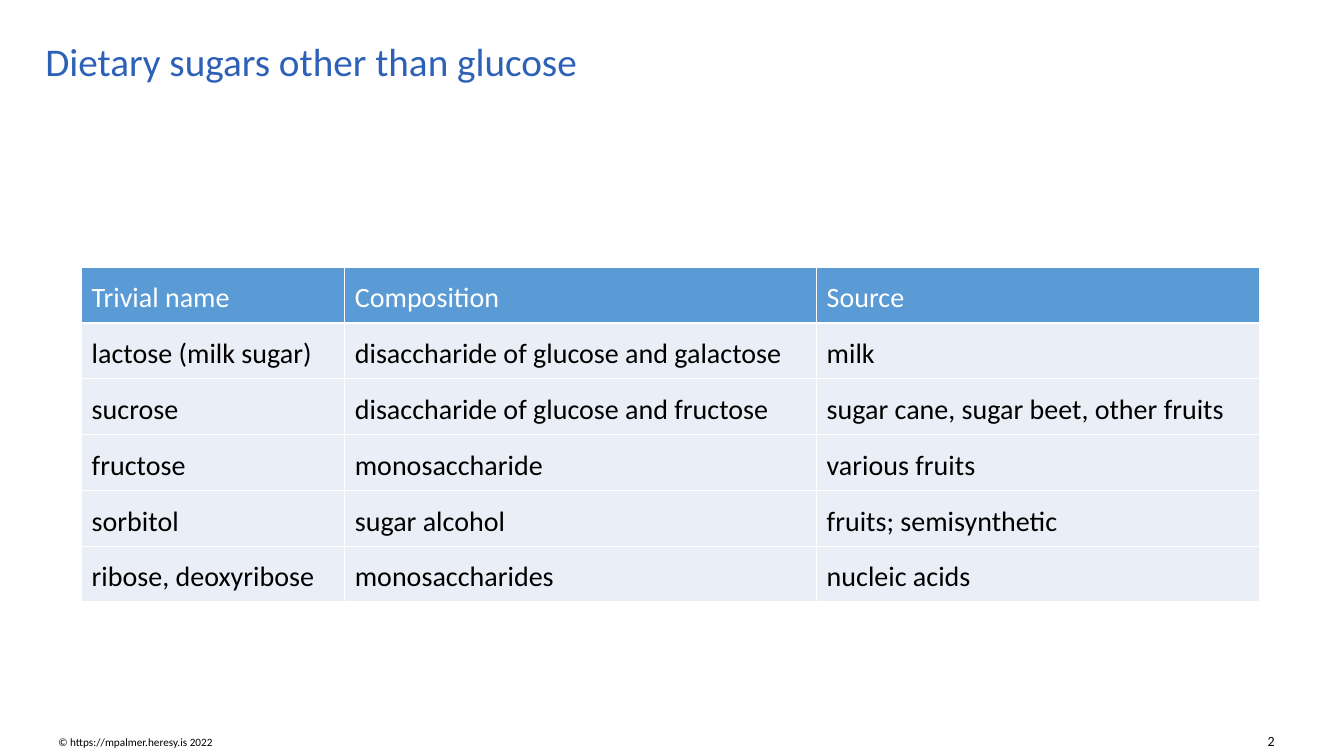
from lxml.etree import SubElement
from pptx import Presentation
from pptx.dml.color import RGBColor
from pptx.enum.text import MSO_ANCHOR, PP_ALIGN
from pptx.oxml.ns import qn
from pptx.util import Inches, Pt

FONT = "Calibri"
WIDE, HIGH = 13.33, 7.5
SUGARS = [
    ("Trivial name", "Composition", "Source"),
    ("lactose (milk sugar)", "disaccharide of glucose and galactose", "milk"),
    ("sucrose", "disaccharide of glucose and fructose", "sugar cane, sugar beet, other fruits"),
    ("fructose", "monosaccharide", "various fruits"),
    ("sorbitol", "sugar alcohol", "fruits; semisynthetic"),
    ("ribose, deoxyribose", "monosaccharides", "nucleic acids"),
]
SHARES = (2.61, 4.68, 4.39)


def color(code):
    """Turn a hex string into a colour."""
    return RGBColor.from_string(code)


def write(frame, text, size, code, align=PP_ALIGN.LEFT):
    """Set one paragraph of text and format its run."""
    frame.text = text
    para = frame.paragraphs[0]
    para.alignment = align
    font = para.runs[0].font
    font.name, font.size, font.bold = FONT, Pt(size), False
    font.color.rgb = color(code)
    return para


def border(cell, code, width):
    """Draw a line on all four sides of a cell."""
    props = cell._tc.get_or_add_tcPr()
    for side in ("a:lnL", "a:lnR", "a:lnT", "a:lnB"):
        line = SubElement(props, qn(side), w=str(Pt(width)))
        fill = SubElement(line, qn("a:solidFill"))
        SubElement(fill, qn("a:srgbClr"), val=code)


def add_title(slide, box, text):
    """Place the title placeholder in the box."""
    title = slide.shapes.title
    title.left, title.top, title.width, title.height = map(Inches, box)
    title.text_frame.vertical_anchor = MSO_ANCHOR.MIDDLE
    write(title.text_frame, text, 28, "2D61B7").line_spacing = 0.9


def add_grid(slide, box, rows, shares):
    """Fill the box with a table whose columns follow the shares."""
    left, top, width, height = box
    table = slide.shapes.add_table(len(rows), len(shares), *map(Inches, box)).table
    table.horz_banding = False
    for col, share in zip(table.columns, shares):
        col.width = Inches(width * share / sum(shares))
    for r, row in enumerate(rows):
        table.rows[r].height = Inches(height / len(rows))
        ink, back = ("000000", "EAEFF7") if r else ("FFFFFF", "5B9BD5")
        for c, text in enumerate(row):
            cell = table.cell(r, c)
            cell.margin_left = cell.margin_right = Inches(0.1)
            cell.margin_top, cell.margin_bottom = Inches(0.14), Inches(0.08)
            border(cell, "FFFFFF", 1)
            cell.fill.solid()
            cell.fill.fore_color.rgb = color(back)
            write(cell.text_frame, text, 20, ink)


def add_note(slide, box, text, size, align):
    """Place a small line of footer text in the box."""
    frame = slide.shapes.add_textbox(*map(Inches, box)).text_frame
    frame.word_wrap = True
    frame.vertical_anchor = MSO_ANCHOR.BOTTOM
    write(frame, text, size, "000000", align)


def main():
    """Build the slide and save it."""
    deck = Presentation()
    deck.slide_width, deck.slide_height = Inches(WIDE), Inches(HIGH)
    slide = deck.slides.add_slide(deck.slide_layouts[5])
    add_note(slide, (0.48, 7.25, 3.14, 0.23), "© https://mpalmer.heresy.is 2022", 8, PP_ALIGN.LEFT)
    add_note(slide, (12.04, 7.21, 0.7, 0.27), "2", 10, PP_ALIGN.RIGHT)
    add_title(slide, (0.35, 0.24, 12.7, 0.78), "Dietary sugars other than glucose")
    add_grid(slide, (0.81, 2.65, 11.68, 3), SUGARS, SHARES)
    deck.save("out.pptx")


if __name__ == "__main__":
    main()
